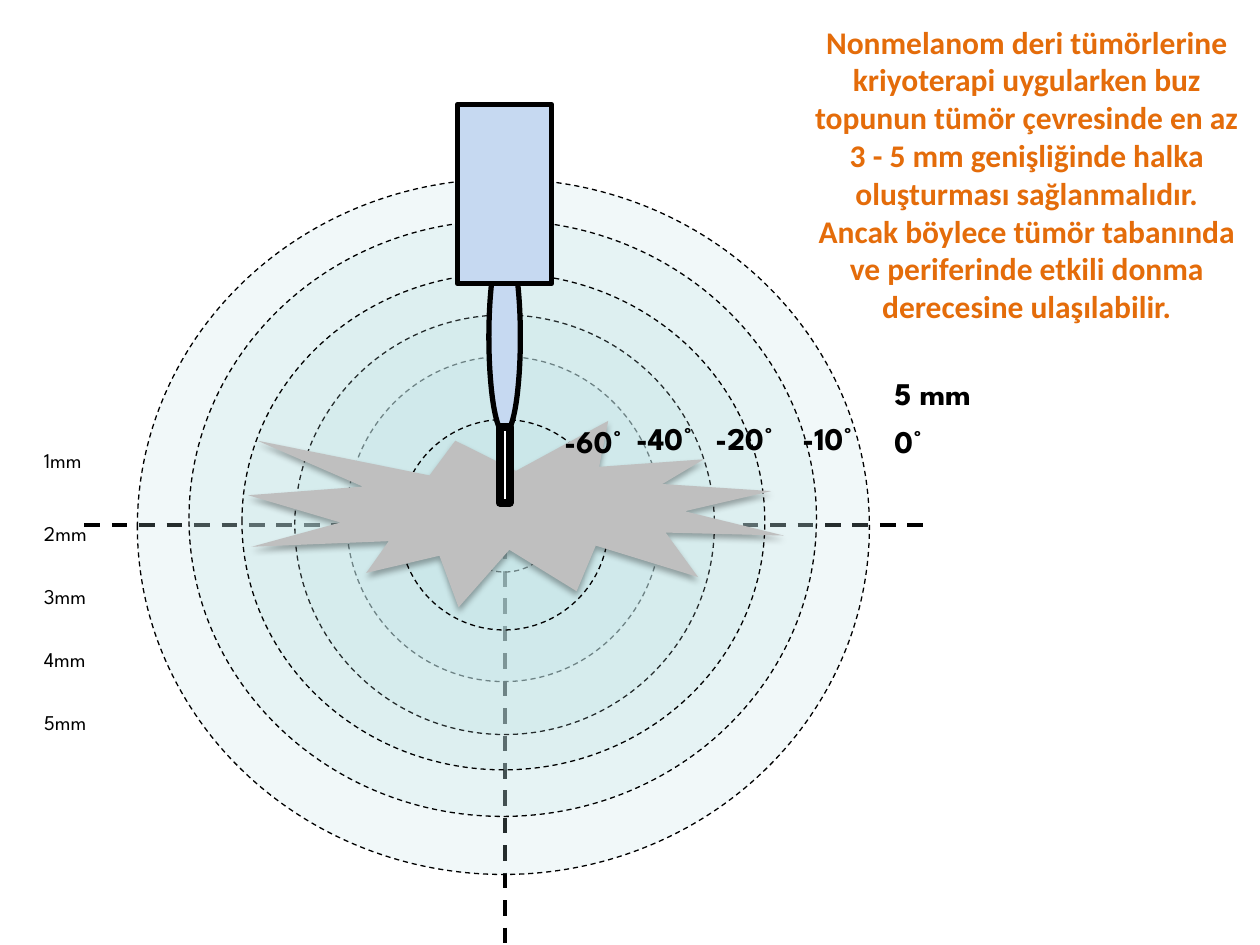
from lxml import etree
from pptx import Presentation
from pptx.dml.color import RGBColor
from pptx.enum.dml import MSO_LINE
from pptx.enum.shapes import MSO_CONNECTOR, MSO_SHAPE
from pptx.enum.text import MSO_AUTO_SIZE, PP_ALIGN
from pptx.oxml.ns import qn
from pptx.util import Inches, Pt

OVAL, RECT, BURST = MSO_SHAPE.OVAL, MSO_SHAPE.RECTANGLE, MSO_SHAPE.EXPLOSION1
STRAIGHT, DASH = MSO_CONNECTOR.STRAIGHT, MSO_LINE.DASH
LEFT, CENTER, GROW = PP_ALIGN.LEFT, PP_ALIGN.CENTER, MSO_AUTO_SIZE.SHAPE_TO_FIT_TEXT

BLACK = RGBColor(0x00, 0x00, 0x00)
WHITE = RGBColor(0xFF, 0xFF, 0xFF)
ICE = RGBColor(0xBB, 0xE0, 0xE3)
METAL = RGBColor(0xC6, 0xD9, 0xF1)
TUMOUR = RGBColor(0xBF, 0xBF, 0xBF)
ORANGE = RGBColor(0xE4, 0x6C, 0x0A)

DEGREE = {"name": "League Spartan", "size": Pt(18), "bold": True}
DEPTH = {"name": "League Spartan", "size": Pt(12), "bold": False}
ADVICE = {"name": "Calibri", "size": Pt(18), "bold": True}

RINGS = [
    (1.66, 2.00, 2.50, 2.58),
    (0.00, 0.59, 5.81, 5.52),
    (2.75, 3.17, 0.32, 0.30),
    (2.50, 2.92, 0.83, 0.79),
    (0.41, 0.92, 4.98, 4.73),
    (1.25, 1.67, 3.33, 3.33),
    (0.83, 1.34, 4.15, 3.94),
    (2.08, 2.50, 1.66, 1.67),
]
DEGREES = [("-40°", 0.57, 0, 0.83), ("-20°", 1.20, 0, 0.77), ("0°", 2.62, 0.02, 0.67),
           ("-60°", 0.00, 0.02, 0.92), ("-10°", 1.89, 0, 0.73)]
ADVICE_TEXT = ("Nonmelanom deri tümörlerine kriyoterapi uygularken buz topunun tümör "
               "çevresinde en az 3 - 5 mm genişliğinde halka oluşturması sağlanmalıdır.\v"
               "Ancak böylece tümör tabanında ve periferinde etkili donma derecesine "
               "ulaşılabilir.")


def add_shape(shapes, kind, box, fill, width=None):
    """Add a filled preset shape, outlined in black when a width is given."""
    sp = shapes.add_shape(kind, *map(Inches, box))
    sp.shadow.inherit = False
    sp.fill.solid()
    sp.fill.fore_color.rgb = fill
    if width is None:
        sp.line.fill.background()
    else:
        sp.line.color.rgb = BLACK
        sp.line.width = Pt(width)
    return sp


def add_axis(shapes, x1, y1, x2, y2):
    """Add a dashed axis line."""
    line = shapes.add_connector(STRAIGHT, *map(Inches, (x1, y1, x2, y2)))
    line.line.color.rgb = BLACK
    line.line.width = Pt(2.25)
    line.line.dash_style = DASH
    etree.SubElement(line._element.spPr, qn("a:effectLst"))


def add_text(s, text, box, style, color=BLACK, align=LEFT):
    """Add a wrapped text box in one style."""
    tf = s.shapes.add_textbox(*map(Inches, box)).text_frame
    tf.word_wrap = True
    tf.auto_size = GROW
    p = tf.paragraphs[0]
    p.text = text
    p.alignment = align
    for r in p.runs:
        r.font.color.rgb = color
        for name, value in style.items():
            setattr(r.font, name, value)


def add_ice_ball(s, x, y, w, h):
    """Draw the axes and the translucent isotherm rings in a box."""
    shapes = s.shapes.add_group_shape().shapes
    add_axis(shapes, x, y + h / 2, x + w, y + h / 2)
    add_axis(shapes, x + w / 2, y, x + w / 2, y + h)
    for dx, dy, rw, rh in RINGS:
        sp = add_shape(shapes, OVAL, (x + 0.42 + dx, y + dy, rw, rh), ICE, 0.75)
        sp.line.dash_style = DASH
        color = sp._element.spPr.find(qn("a:solidFill"))[0]
        etree.SubElement(color, qn("a:alpha"), val="20000")


def add_tumour(s, x, y, w, h):
    """Draw the tumour as a burst with a soft shadow below it."""
    sp = add_shape(s.shapes, BURST, (x, y, w, h), TUMOUR)
    effects = sp._element.spPr.find(qn("a:effectLst"))
    shadow = etree.SubElement(effects, qn("a:outerShdw"), blurRad=str(Pt(3.5)),
                              dist=str(Pt(2.2)), dir="5400000", rotWithShape="0")
    color = etree.SubElement(shadow, qn("a:srgbClr"), val=str(BLACK))
    etree.SubElement(color, qn("a:alpha"), val="32000")


def add_probe(s, x, y, w):
    """Draw the cryoprobe, centred on a handle of the given width."""
    shapes = s.shapes.add_group_shape().shapes
    mid = x + w / 2
    add_shape(shapes, OVAL, (mid - 0.125, y + 1.08, 0.25, 1.53), METAL, 3)
    add_shape(shapes, RECT, (x, y, w, 1.42), METAL, 3)
    add_shape(shapes, RECT, (mid - 0.04, y + 2.56, 0.08, 0.6), WHITE, 4.5)


def add_degrees(s, x, y):
    """Label the rings with temperatures and the margin width."""
    for text, dx, dy, w in DEGREES:
        add_text(s, text, (x + dx, y + dy, w, 0.4), DEGREE)
    add_text(s, "5 mm", (x + 2.62, y - 0.36, 1.17, 0.4), DEGREE)


def add_depths(s, x, y, w):
    """List the depths down the left edge."""
    for i, dy in enumerate((0, 0.58, 1.08, 1.58, 2.08), 1):
        add_text(s, f"{i}mm", (x, y + dy, w, 0.3), DEPTH)


def main():
    """Build and save the slide."""
    prs = Presentation()
    prs.slide_width, prs.slide_height = Inches(10), Inches(7.5)
    s = prs.slides.add_slide(prs.slide_layouts[6])
    add_ice_ball(s, 0.67, 0.83, 6.67, 6.67)
    add_tumour(s, 1.97, 3.34, 4.25, 1.48)
    add_probe(s, 3.63, 0.83, 0.75)
    add_degrees(s, 4.38, 3.28)
    add_text(s, ADVICE_TEXT, (6.35, 0.13, 3.6, 2.58), ADVICE, ORANGE, CENTER)
    add_depths(s, 0.25, 3.5, 0.92)
    prs.save("out.pptx")


if __name__ == "__main__":
    main()
